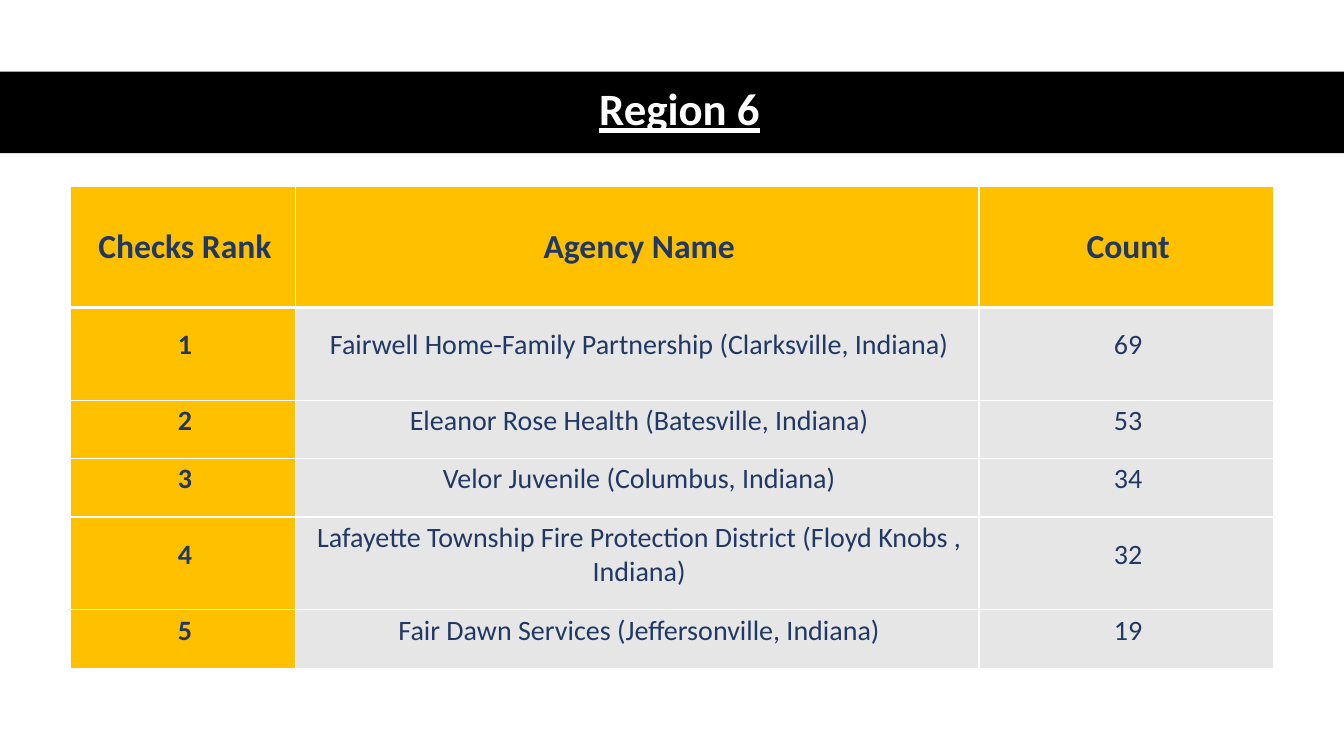
"""Build the Region 6 slide ranking agencies by number of checks."""
import pptx
import pptx.dml.color
import pptx.enum.shapes
import pptx.enum.text
import pptx.oxml
import pptx.oxml.ns
import pptx.util

Inches = pptx.util.Inches
RGBColor = pptx.dml.color.RGBColor

BLACK = RGBColor(0x00, 0x00, 0x00)
WHITE = RGBColor(0xFF, 0xFF, 0xFF)
GOLD = RGBColor(0xFF, 0xC0, 0x00)
GRAY = RGBColor(0xE7, 0xE6, 0xE6)
NAVY = RGBColor(0x20, 0x38, 0x64)

FONT = "Calibri"
COLUMN_WIDTHS = (2.23, 6.78, 2.92)
ROW_HEIGHTS = (1.2, 0.92, 0.58, 0.58, 0.92, 0.58)
HEADINGS = ("Checks Rank", "Agency Name", "Count")
AGENCIES = (
    ("Fairwell Home-Family Partnership (Clarksville, Indiana)", 69),
    ("Eleanor Rose Health (Batesville, Indiana)", 53),
    ("Velor Juvenile (Columbus, Indiana)", 34),
    ("Lafayette Township Fire Protection District (Floyd Knobs , Indiana)", 32),
    ("Fair Dawn Services (Jeffersonville, Indiana)", 19),
)


def add_centered_run(paragraph, text, size, color, bold):
    paragraph.alignment = pptx.enum.text.PP_ALIGN.CENTER
    run = paragraph.add_run()
    run.text = text
    run.font.name = FONT
    run.font.size = pptx.util.Pt(size)
    run.font.bold = bold
    run.font.color.rgb = color
    return run


def add_title_bar(slide):
    bar = slide.shapes.add_shape(
        pptx.enum.shapes.MSO_SHAPE.RECTANGLE,
        Inches(0), Inches(0.71), Inches(13.33), Inches(0.81))
    bar.shadow.inherit = False
    bar.fill.solid()
    bar.fill.fore_color.rgb = BLACK
    bar.line.fill.background()
    title = slide.shapes.title
    title.element.addprevious(bar.element)


def format_title(title, text):
    title.left, title.top = Inches(0.61), Inches(0.7)
    title.width, title.height = Inches(12.26), Inches(0.81)
    title.text_frame.vertical_anchor = pptx.enum.text.MSO_ANCHOR.MIDDLE
    paragraph = title.text_frame.paragraphs[0]
    paragraph.line_spacing = 0.9
    paragraph.space_after = pptx.util.Pt(6)
    add_centered_run(paragraph, text, 32, WHITE, True).font.underline = True


def set_borders(cell, top_width, bottom_width):
    properties = cell._tc.get_or_add_tcPr()
    widths = {"lnL": 1, "lnR": 1, "lnT": top_width, "lnB": bottom_width}
    for position, (side, width) in enumerate(widths.items()):
        border = pptx.oxml.parse_xml(
            f'<a:{side} {pptx.oxml.ns.nsdecls("a")} w="{pptx.util.Pt(width)}">'
            f'<a:solidFill><a:srgbClr val="{WHITE}"/></a:solidFill></a:{side}>')
        properties.insert(position, border)


def fill_cell(cell, text, is_header, is_rank):
    cell.vertical_anchor = pptx.enum.text.MSO_ANCHOR.MIDDLE
    cell.margin_left, cell.margin_right = Inches(0.12), Inches(0.08)
    cell.margin_top = Inches(0.17 if is_header else 0)
    cell.margin_bottom = Inches(0.17)
    emphasized = is_header or is_rank
    cell.fill.solid()
    cell.fill.fore_color.rgb = GOLD if emphasized else GRAY
    add_centered_run(cell.text_frame.paragraphs[0], text,
                     24 if is_header else 20, NAVY, emphasized)


def add_ranking_table(slide):
    rows = [HEADINGS] + [(str(rank), agency, str(count))
                         for rank, (agency, count) in enumerate(AGENCIES, 1)]
    table = slide.shapes.add_table(
        len(rows), len(HEADINGS), Inches(0.7), Inches(1.85),
        Inches(sum(COLUMN_WIDTHS)), Inches(sum(ROW_HEIGHTS))).table
    for column, width in zip(table.columns, COLUMN_WIDTHS):
        column.width = Inches(width)
    for row_index, (texts, height) in enumerate(zip(rows, ROW_HEIGHTS)):
        table.rows[row_index].height = Inches(height)
        for column_index, text in enumerate(texts):
            cell = table.cell(row_index, column_index)
            fill_cell(cell, text, row_index == 0, column_index == 0)
            set_borders(cell, 3 if row_index == 1 else 1,
                        3 if row_index == 0 else 1)


def main():
    presentation = pptx.Presentation()
    presentation.slide_width = Inches(13.33)
    presentation.slide_height = Inches(7.5)
    slide = presentation.slides.add_slide(presentation.slide_layouts[5])
    add_title_bar(slide)
    format_title(slide.shapes.title, "Region 6")
    add_ranking_table(slide)
    presentation.save("out.pptx")


if __name__ == "__main__":
    main()
